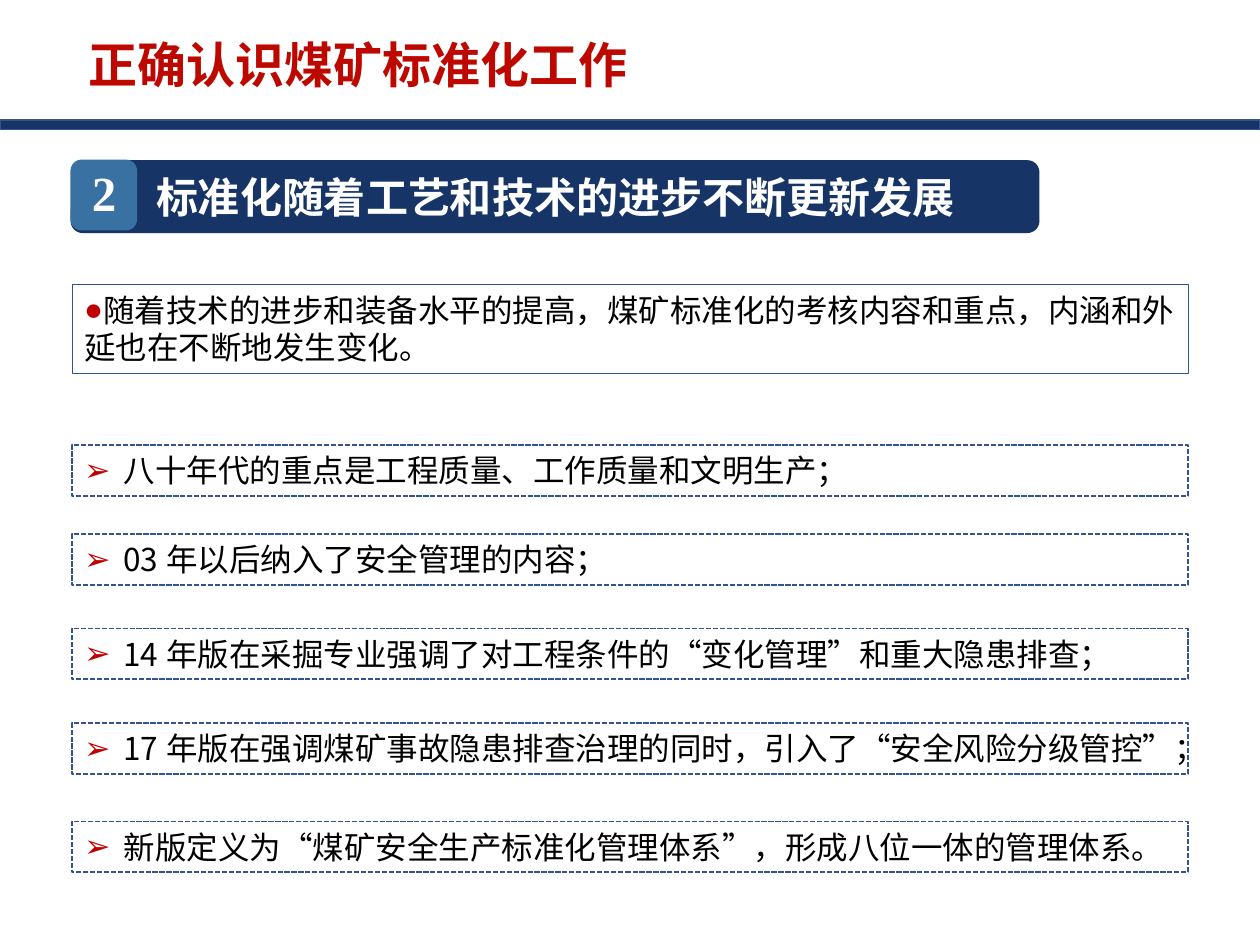
from pptx import Presentation
from pptx.dml.color import RGBColor
from pptx.enum.dml import MSO_LINE
from pptx.enum.shapes import MSO_SHAPE
from pptx.enum.text import MSO_ANCHOR, MSO_AUTO_SIZE, PP_ALIGN
from pptx.oxml.ns import qn
from pptx.util import Pt
from lxml.etree import SubElement

HUES = {"red": "BD0800", "mark": "C00000", "navy": "163566", "blue": "3972A2",
        "edge": "325491", "white": "FFFFFF", "black": "000000"}
SANS = "Noto Sans CJK SC"
LEFT, WIDE = 41, 638


def add_box(kind, place, fill=None, edge=None, thick=1, dash=None):
    box = deck.shapes.add_shape(kind, *[Pt(n) for n in place])
    box.shadow.inherit = False
    for part, hue in ((box.fill, fill), (box.line.fill, edge)):
        if hue:
            part.solid()
            part.fore_color.rgb = RGBColor.from_string(HUES[hue])
        else:
            part.background()
    if edge:
        box.line.width = Pt(thick)
        box.line.dash_style = dash
    return box


def put_text(box, text, size, hue, font=SANS, bold=False, align=PP_ALIGN.LEFT,
             anchor=MSO_ANCHOR.TOP, wrap=True, mark=None, inset=0):
    frame = box.text_frame
    look = {"word_wrap": wrap, "vertical_anchor": anchor,
            "auto_size": MSO_AUTO_SIZE.NONE}
    for name, value in look.items():
        setattr(frame, name, value)
    para = frame.paragraphs[0]
    para.alignment = align
    run = para.add_run()
    run.text = text
    for name, value in {"name": font, "size": Pt(size), "bold": bold}.items():
        setattr(run.font, name, value)
    run.font.color.rgb = RGBColor.from_string(HUES[hue])
    # East Asian glyphs take their own typeface
    SubElement(run.font._element, qn("a:ea")).set("typeface", SANS)
    if mark:
        props = para._p.get_or_add_pPr()
        props.set("marL", str(Pt(inset)))
        props.set("indent", str(Pt(-22.5)))
        tint = SubElement(props, qn("a:buClr"))
        SubElement(tint, qn("a:srgbClr")).set("val", HUES["mark"])
        SubElement(props, qn("a:buFont")).set("typeface", "Arial")
        SubElement(props, qn("a:buChar")).set("char", mark)


show = Presentation()
show.slide_width, show.slide_height = Pt(720), Pt(540)
deck = show.slides.add_slide(show.slide_layouts[5])

# Title and rule below it
title = deck.shapes.title
spot = {"left": LEFT, "top": 16, "width": 327, "height": 41}
for name, value in spot.items():
    setattr(title, name, Pt(value))
title.line.color.rgb = RGBColor.from_string(HUES["white"])
title.line.width = Pt(0.25)
put_text(title, "正确认识煤矿标准化工作", 28, "red", bold=True,
         align=PP_ALIGN.CENTER, anchor=MSO_ANCHOR.MIDDLE, wrap=False)
add_box(MSO_SHAPE.RECTANGLE, (0, 68.5, 720, 5.5), "navy", "edge")

# Numbered banner
banner = add_box(MSO_SHAPE.ROUNDED_RECTANGLE, (40.3, 91.5, 553.7, 41.7), "navy")
put_text(banner, "标准化随着工艺和技术的进步不断更新发展", 24, "white", "Calibri",
         True, PP_ALIGN.CENTER, MSO_ANCHOR.MIDDLE)
add_box(MSO_SHAPE.ROUNDED_RECTANGLE, (40.3, 91.2, 38, 40.5), "blue")
digit = deck.shapes.add_textbox(Pt(45.4), Pt(89.3), Pt(23), Pt(41))
put_text(digit, "2", 28, "white", "Times New Roman", True)

# Lead statement
lead = add_box(MSO_SHAPE.RECTANGLE, (LEFT, 162.5, WIDE, 51), edge="edge", thick=0.25)
put_text(lead, "随着技术的进步和装备水平的提高，煤矿标准化的考核内容和重点，"
         "内涵和外延也在不断地发生变化。", 18, "black", mark="●")

# Stages over the years
stages = [
    (254.3, "八十年代的重点是工程质量、工作质量和文明生产；"),
    (305.2, "03年以后纳入了安全管理的内容；"),
    (359.2, "14年版在采掘专业强调了对工程条件的“变化管理”和重大隐患排查；"),
    (413.2, "17年版在强调煤矿事故隐患排查治理的同时，引入了“安全风险分级管控”；"),
    (469.4, "新版定义为“煤矿安全生产标准化管理体系”，形成八位一体的管理体系。"),
]
for top, text in stages:
    stage = add_box(MSO_SHAPE.RECTANGLE, (LEFT, top, WIDE, 29), edge="edge",
                    dash=MSO_LINE.SQUARE_DOT)
    put_text(stage, text, 18, "black", mark="➢", inset=22.5)

show.save("out.pptx")
